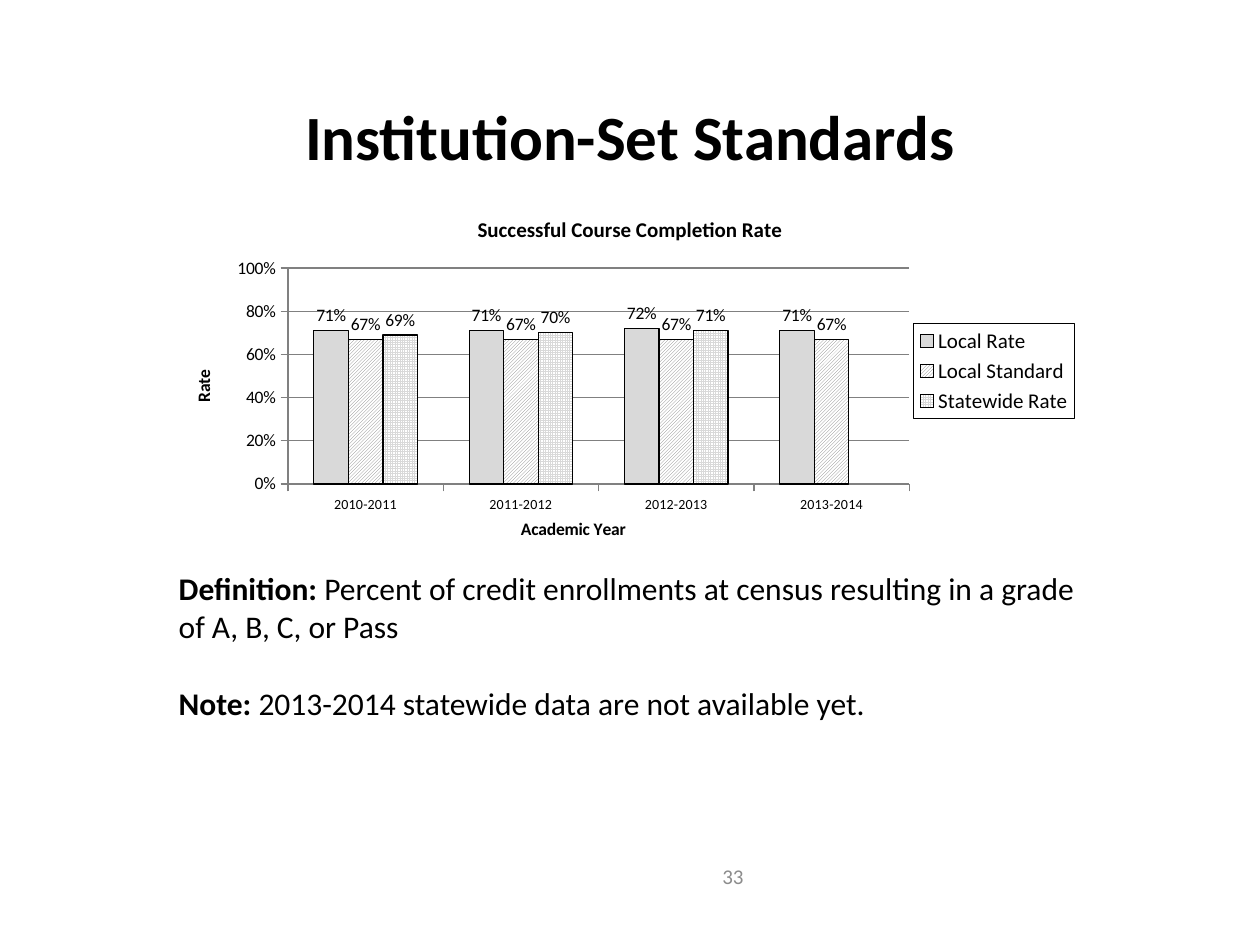
from lxml.etree import SubElement
from pptx import Presentation
from pptx.chart.data import CategoryChartData
from pptx.dml.color import RGBColor
from pptx.enum.chart import XL_CHART_TYPE, XL_LABEL_POSITION, XL_LEGEND_POSITION, XL_TICK_MARK
from pptx.enum.dml import MSO_PATTERN
from pptx.enum.text import MSO_ANCHOR, PP_ALIGN
from pptx.oxml.ns import qn
from pptx.util import Inches, Pt

FONT = "Calibri"
BLACK = RGBColor(0x00, 0x00, 0x00)
WHITE = RGBColor(0xFF, 0xFF, 0xFF)
LIGHT = RGBColor(0xD9, 0xD9, 0xD9)
GREY = RGBColor(0x80, 0x80, 0x80)
PAGE_GREY = RGBColor(0x8C, 0x8C, 0x8C)

# Content
TITLE = "Institution-Set Standards"
PAGE = "33"
CHART_TITLE = "Successful Course Completion Rate"
YEARS = ["2010-2011", "2011-2012", "2012-2013", "2013-2014"]
# name, values, pattern (None is solid), fill colour
SERIES = [
    ("Local Rate", (0.71, 0.71, 0.72, 0.71), None, LIGHT),
    ("Local Standard", (0.67, 0.67, 0.67, 0.67), MSO_PATTERN.LIGHT_UPWARD_DIAGONAL, GREY),
    ("Statewide Rate", (0.69, 0.70, 0.71, None), MSO_PATTERN.SMALL_GRID, LIGHT),
]
PLOT_AREA = {"x": 0.124, "y": 0.203, "w": 0.683, "h": 0.623}
NOTES = [
    ("Definition: ", "Percent of credit enrollments at census resulting in a grade "
                     "of A, B, C, or Pass"),
    ("Note: ", "2013-2014 statewide data are not available yet."),
]


def set_font(font, size, bold=False, color=BLACK):
    font.name, font.size, font.bold = FONT, Pt(size), bold
    font.color.rgb = color


def set_title(owner, text, size):
    tf = owner.text_frame
    tf.text = text
    set_font(tf.paragraphs[0].font, size, bold=True)


def place(sp, left, top, width, height):
    sp.left, sp.top = Inches(left), Inches(top)
    sp.width, sp.height = Inches(width), Inches(height)


def fix_plot_area(chart, area):
    plot_area = chart._chartSpace.chart.plotArea
    layout = plot_area.find(qn("c:layout"))
    if layout is None:
        layout = SubElement(plot_area, qn("c:layout"))
        plot_area.insert(0, layout)
    manual = SubElement(layout, qn("c:manualLayout"))
    settings = {"layoutTarget": "inner", "xMode": "edge", "yMode": "edge", **area}
    for tag, value in settings.items():
        SubElement(manual, qn(f"c:{tag}")).set("val", str(value))


prs = Presentation()
prs.slide_width, prs.slide_height = Inches(10), Inches(7.5)
s = prs.slides.add_slide(prs.slide_layouts[5])

# Title
title = s.shapes.title
place(title, 1.5, 0.72, 7, 0.71)
title.text_frame.text = TITLE
p = title.text_frame.paragraphs[0]
p.alignment = PP_ALIGN.CENTER
set_font(p.font, 36, bold=True)

# Page number
sp = s.shapes.add_textbox(Inches(4), Inches(6.75), Inches(2), Inches(0.4))
tf = sp.text_frame
tf.word_wrap = True
tf.vertical_anchor = MSO_ANCHOR.MIDDLE
tf.text = PAGE
p = tf.paragraphs[0]
p.alignment = PP_ALIGN.RIGHT
set_font(p.font, 12, color=PAGE_GREY)

# Chart
data = CategoryChartData(number_format="0%")
data.categories = YEARS
for name, values, _, _ in SERIES:
    data.add_series(name, values)
chart = s.shapes.add_chart(XL_CHART_TYPE.COLUMN_CLUSTERED, Inches(1.39), Inches(1.57),
                           Inches(7.22), Inches(2.75), data).chart
set_font(chart.font, 10)
chart.has_title = True
set_title(chart.chart_title, CHART_TITLE, 12)
chart.chart_title.include_in_layout = False
fix_plot_area(chart, PLOT_AREA)

# Columns and their labels
plot = chart.plots[0]
plot.gap_width, plot.overlap = 150, 0
plot.vary_by_categories = False
for series, (_, _, pattern, color) in zip(plot.series, SERIES):
    fill = series.format.fill
    if pattern is None:
        fill.solid()
        fill.fore_color.rgb = color
    else:
        fill.patterned()
        fill.pattern = pattern
        fill.fore_color.rgb, fill.back_color.rgb = color, WHITE
    series.format.line.color.rgb = BLACK
    series.format.line.width = Pt(0.75)
    labels = series.data_labels
    labels.show_value = True
    labels.number_format, labels.number_format_is_linked = "0%", False
    labels.position = XL_LABEL_POSITION.OUTSIDE_END
    set_font(labels.font, 10)

# Axes
cat_axis, val_axis = chart.category_axis, chart.value_axis
for axis, text, size in ((cat_axis, "Academic Year", 8), (val_axis, "Rate", 10)):
    set_title(axis.axis_title, text, 10)
    set_font(axis.tick_labels.font, size)
    axis.major_tick_mark = XL_TICK_MARK.OUTSIDE
    axis.format.line.color.rgb = GREY
val_axis.minimum_scale, val_axis.maximum_scale, val_axis.major_unit = 0, 1, 0.2
val_axis.tick_labels.number_format = "0%"
val_axis.tick_labels.number_format_is_linked = False
val_axis.has_major_gridlines = True
val_axis.major_gridlines.format.line.color.rgb = GREY

# Legend with a thin frame
chart.has_legend = True
legend = chart.legend
legend.position = XL_LEGEND_POSITION.RIGHT
legend.include_in_layout = False
set_font(legend.font, 12)
frame = SubElement(legend._element, qn("c:spPr"))
legend._element.find(qn("c:txPr")).addprevious(frame)
line = SubElement(frame, qn("a:ln"), w=str(Pt(0.75)))
SubElement(SubElement(line, qn("a:solidFill")), qn("a:srgbClr"), val=str(BLACK))

# Definition and note
sp = s.shapes.add_textbox(Inches(1.32), Inches(4.47), Inches(7.36), Inches(1.31))
tf = sp.text_frame
tf.word_wrap = True
for i, (label, text) in enumerate(NOTES):
    p = tf.add_paragraph() if i else tf.paragraphs[0]
    p.space_before = Pt(22 if i else 0)
    set_font(p.font, 18)
    for content, bold in ((label, True), (text, False)):
        r = p.add_run()
        r.text, r.font.bold = content, bold

prs.save("out.pptx")
